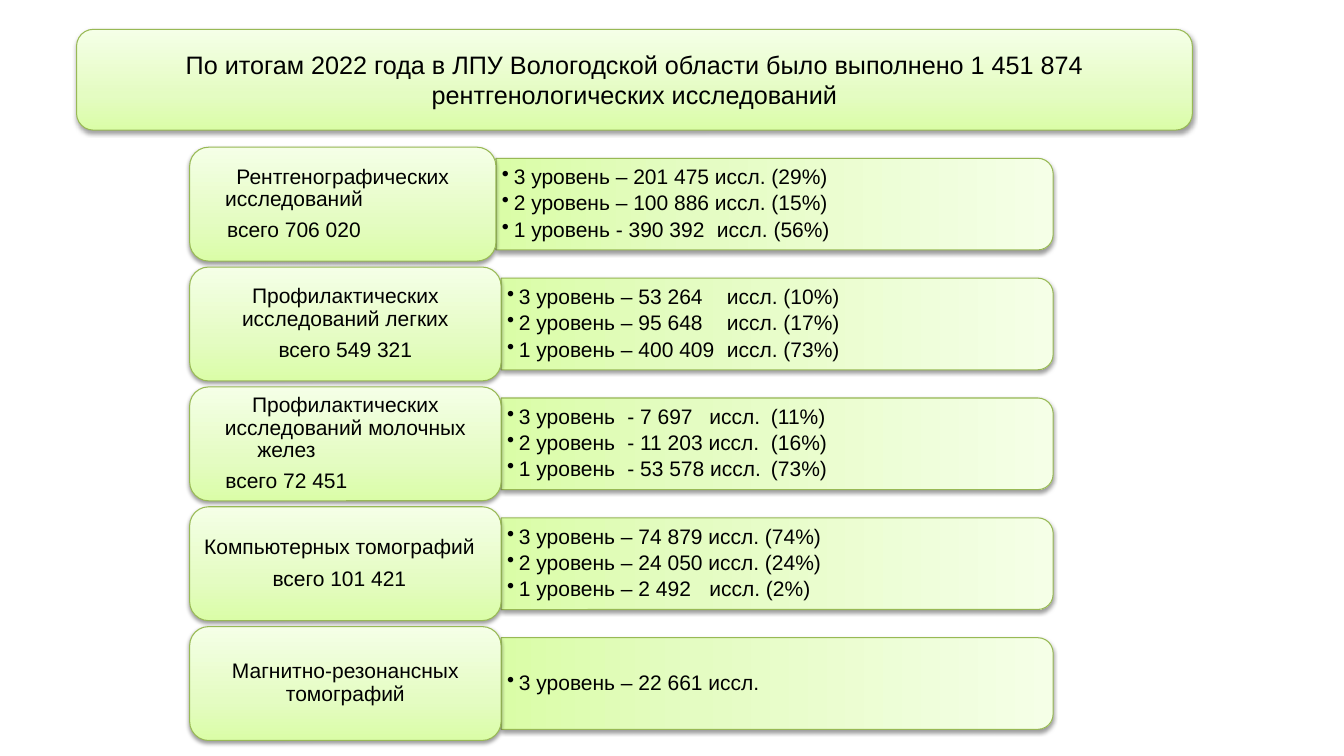
from copy import deepcopy

from lxml import etree
from pptx import Presentation
from pptx.dml.color import RGBColor
from pptx.enum.shapes import MSO_SHAPE
from pptx.enum.text import MSO_ANCHOR, PP_ALIGN
from pptx.oxml.ns import qn
from pptx.util import Cm, Pt

ROUND = MSO_SHAPE.ROUNDED_RECTANGLE
TAB_BAR = MSO_SHAPE.ROUND_2_SAME_RECTANGLE
MIDDLE = MSO_ANCHOR.MIDDLE
LEFT, CENTER = PP_ALIGN.LEFT, PP_ALIGN.CENTER

COLORS = {"deep": "DAFDA7", "mid": "E4FCC2", "pale": "F5FFE7",
          "edge": "98B955", "text": "000000"}
STOPS = ((0, "deep"), (0.35, "mid"), (1, "pale"))

TITLE = ("По итогам 2022 года в ЛПУ Вологодской области было выполнено "
         "1 451 874 рентгенологических исследований")

CARD_LEFT, CARD_TOP, CARD_HIGH, PITCH = 4.78, 3.71, 2.87, 3.02
BAR_HIGH, BAR_END = 2.31, 26.54
HANG = 0.3

# Label width, label lines as (text, right indent, space after), tab stops, levels
CARDS = (
    (7.72,
     (("Рентгенографических", 0, 0), ("исследований", 2.46, 6),
      ("всего 706 020", 0, 0)),
     (5.42,),
     ("3 уровень – 201 475 иссл. (29%)",
      "2 уровень – 100 886 иссл. (15%)",
      "1 уровень - 390 392\tиссл. (56%)")),
    (7.85,
     (("Профилактических исследований легких", 0, 6), ("всего 549 321", 0, 0)),
     (5.54,),
     ("3 уровень – 53 264\tиссл. (10%)",
      "2 уровень – 95 648\tиссл. (17%)",
      "1 уровень – 400 409\tиссл. (73%)")),
    (7.85,
     (("Профилактических исследований молочных", 0, 0), ("желез", 2.97, 6),
      ("всего 72 451", 0, 0)),
     (3.03, 5.1, 6.65),
     ("3 уровень\t- 7 697\tиссл.\t(11%)",
      "2 уровень\t- 11 203 иссл.\t(16%)",
      "1 уровень\t- 53 578 иссл.\t(73%)")),
    (7.85,
     (("Компьютерных томографий", 0.3, 6), ("всего 101 421", 0, 0)),
     (5.1,),
     ("3 уровень – 74 879 иссл. (74%)",
      "2 уровень – 24 050 иссл. (24%)",
      "1 уровень – 2 492\tиссл. (2%)")),
    (7.85,
     (("Магнитно-резонансных томографий", 0, 0),),
     (),
     ("3 уровень – 22 661 иссл.",)),
)


def color(name):
    return RGBColor.from_string(COLORS[name])


def node(parent, tag, **attrs):
    return etree.SubElement(parent, qn(tag), {k: str(v) for k, v in attrs.items()})


def panel(slide, kind, left, top, width, height):
    """Add a shape with the green gradient, thin edge and soft shadow."""
    shape = slide.shapes.add_shape(kind, Cm(left), Cm(top), Cm(width), Cm(height))
    shape.fill.gradient()
    shape.fill.gradient_angle = 90
    props = shape.element.spPr
    stops = props.find(".//" + qn("a:gsLst"))
    stops.insert(1, deepcopy(stops[0]))
    for stop, (place, name) in zip(shape.fill.gradient_stops, STOPS):
        stop.position = place
        stop.color.rgb = color(name)
    shape.line.color.rgb = color("edge")
    shape.line.width = Pt(0.75)
    shape.shadow.inherit = False
    shade = node(props.find(qn("a:effectLst")), "a:outerShdw", blurRad=Pt(3.1),
                 dist=Pt(1.6), dir=5400000, algn="ctr", rotWithShape=0)
    node(node(shade, "a:srgbClr", val="000000"), "a:alpha", val=38000)
    return shape


def set_frame(frame, side, edge):
    frame.word_wrap = True
    frame.vertical_anchor = MIDDLE
    frame.margin_left = frame.margin_right = Cm(side)
    frame.margin_top = frame.margin_bottom = Cm(edge)


def write(para, text, size=15, align=CENTER, spacing=0.9, after=0, right=0,
          bullet=False, tabs=()):
    props = para._p.get_or_add_pPr()
    if right:
        props.set("marR", str(Cm(right)))
    if bullet:
        props.set("marL", str(Cm(HANG)))
        props.set("indent", str(-Cm(HANG)))
        node(props, "a:buChar", char="•")
    if tabs:
        stops = node(props, "a:tabLst")
        for place in tabs:
            node(stops, "a:tab", pos=Cm(place), algn="l")
    para.alignment = align
    para.line_spacing = spacing
    para.space_after = Pt(after)
    run = para.add_run()
    run.text = text
    run.font.size = Pt(size)
    run.font.name = "Arial"
    run.font.color.rgb = color("text")


def fill_lines(frame, lines):
    """Write one paragraph for each (text, format) pair."""
    for i, (text, form) in enumerate(lines):
        para = frame.add_paragraph() if i else frame.paragraphs[0]
        write(para, text, **form)


def add_bar(slide, left, top, levels, tabs):
    wide = BAR_END - left
    mid_x, mid_y = left + wide / 2, top + BAR_HIGH / 2
    bar = panel(slide, TAB_BAR, mid_x - BAR_HIGH / 2, mid_y - wide / 2, BAR_HIGH, wide)
    bar.rotation = 90
    box = slide.shapes.add_textbox(Cm(left), Cm(top + 0.11),
                                   Cm(wide - 0.11), Cm(BAR_HIGH - 0.22))
    set_frame(box.text_frame, 0.15, 0.08)
    form = {"align": LEFT, "after": 2.6, "bullet": True, "tabs": tabs}
    fill_lines(box.text_frame, [(text, form) for text in levels])


def add_label(slide, top, width, lines):
    label = panel(slide, ROUND, CARD_LEFT, top, width, CARD_HIGH)
    set_frame(label.text_frame, 0.15, 0.08)
    fill_lines(label.text_frame, [(text, {"right": right, "after": after})
                                  for text, right, after in lines])


def add_title(slide):
    title = panel(slide, ROUND, 1.93, 0.74, 28.12, 2.54)
    set_frame(title.text_frame, 0.25, 0.13)
    write(title.text_frame.paragraphs[0], TITLE, size=18, spacing=1)


def main():
    deck = Presentation()
    deck.slide_width, deck.slide_height = Cm(33.87), Cm(19.05)
    slide = deck.slides.add_slide(deck.slide_layouts[6])
    for i, (width, lines, tabs, levels) in enumerate(CARDS):
        top = CARD_TOP + i * PITCH
        add_bar(slide, CARD_LEFT + width, top + (CARD_HIGH - BAR_HIGH) / 2, levels, tabs)
        add_label(slide, top, width, lines)
    add_title(slide)
    deck.save("out.pptx")


if __name__ == "__main__":
    main()
